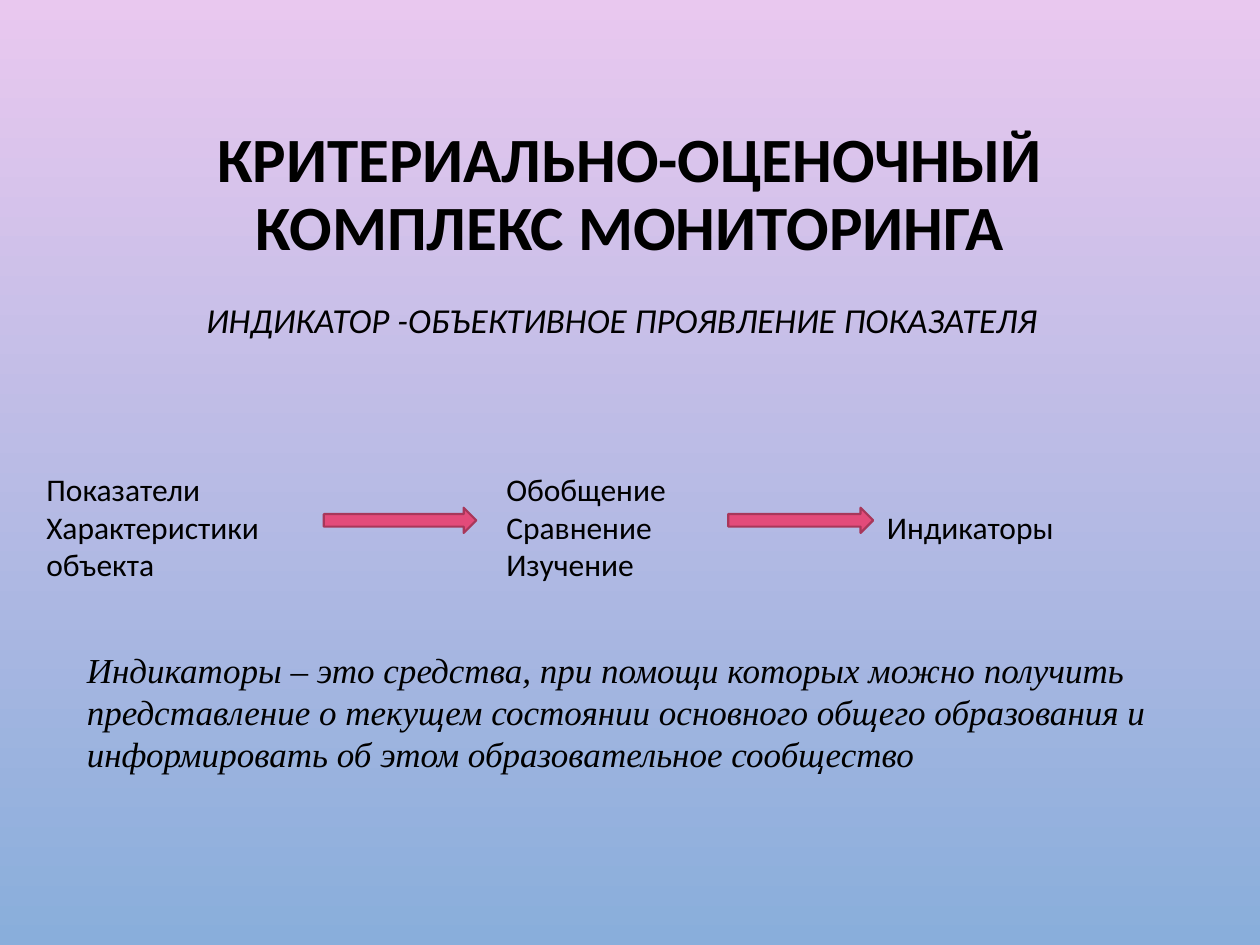
from dataclasses import dataclass

from pptx import Presentation
from pptx import util as u
from pptx.dml.color import RGBColor
from pptx.enum import shapes, text

COLORS = {
    "top": "E9C8EF",
    "bottom": "89AEDB",
    "text": "000000",
    "arrow": "E34B7A",
    "arrow_line": "A8375A",
}
COLUMNS, ROWS = 100, 75
WIDTH, HEIGHT = u.Inches(10), u.Inches(7.5)


@dataclass
class Box:
    col: float
    row: float
    cols: float
    rows: float

    def emu(self) -> tuple[int, int, int, int]:
        dx, dy = WIDTH / COLUMNS, HEIGHT / ROWS
        return (round(self.col * dx), round(self.row * dy),
                round(self.cols * dx), round(self.rows * dy))


@dataclass
class Label:
    box: Box
    lines: list[str]
    size: float = 18
    font: str = "Calibri"
    bold: bool = False
    italic: bool = False
    wrap: bool = False
    align: text.PP_ALIGN = text.PP_ALIGN.LEFT
    spacing: float = 1.0
    before: float = 0


TITLE = Label(Box(7.5, 6.8, 85, 17.5), ["КРИТЕРИАЛЬНО-ОЦЕНОЧНЫЙ КОМПЛЕКС МОНИТОРИНГА"],
              size=36, bold=True, wrap=True, align=text.PP_ALIGN.CENTER, spacing=0.9)
LABELS = [
    Label(Box(1.7, 22.9, 95.3, 4.7), ["ИНДИКАТОР -ОБЪЕКТИВНОЕ ПРОЯВЛЕНИЕ ПОКАЗАТЕЛЯ"],
          size=20, italic=True, wrap=True, align=text.PP_ALIGN.CENTER, spacing=1.1, before=10),
    Label(Box(2.7, 36.8, 23, 10.1), ["Показатели", "Характеристики", "объекта"]),
    Label(Box(39.2, 36.8, 16.7, 10.1), ["Обобщение", "Сравнение", "Изучение"]),
    Label(Box(69.4, 39.8, 18.5, 4), ["Индикаторы"]),
    Label(Box(5.9, 51, 89.9, 11.1),
          ["Индикаторы – это средства, при помощи которых можно получить представление "
           "о текущем состоянии основного общего образования и информировать об этом "
           "образовательное сообщество"],
          size=20, font="Times New Roman", italic=True, wrap=True),
]
ARROWS = [Box(25.7, 40.3, 12.1, 2), Box(57.8, 40.3, 11.5, 2)]


def color(name: str) -> RGBColor:
    return RGBColor.from_string(COLORS[name])


def paint_background(s) -> None:
    fill = s.background.fill
    fill.gradient()
    fill.gradient_angle = 270
    for stop, position, name in zip(fill.gradient_stops, (0, 1), ("top", "bottom")):
        stop.position = position
        stop.color.rgb = color(name)


def write(sp, label: Label) -> None:
    sp.left, sp.top, sp.width, sp.height = label.box.emu()
    tf = sp.text_frame
    tf.text = "\n".join(label.lines)
    tf.auto_size = text.MSO_AUTO_SIZE.NONE
    tf.word_wrap = label.wrap
    for p in tf.paragraphs:
        p.alignment = label.align
        p.line_spacing = label.spacing
        p.space_before = u.Pt(label.before)
        p.font.name = label.font
        p.font.size = u.Pt(label.size)
        p.font.bold = label.bold
        p.font.italic = label.italic
        p.font.color.rgb = color("text")


def add_arrow(s, box: Box) -> None:
    sp = s.shapes.add_shape(shapes.MSO_SHAPE.RIGHT_ARROW, *box.emu())
    sp.shadow.inherit = False
    sp.fill.solid()
    sp.fill.fore_color.rgb = color("arrow")
    sp.line.color.rgb = color("arrow_line")
    sp.line.width = u.Pt(1.25)


def main() -> None:
    prs = Presentation()
    prs.slide_width, prs.slide_height = WIDTH, HEIGHT
    s = prs.slides.add_slide(prs.slide_layouts.get_by_name("Title Only"))
    paint_background(s)
    write(s.shapes.title, TITLE)
    s.shapes.title.text_frame.vertical_anchor = text.MSO_ANCHOR.MIDDLE
    for label in LABELS:
        write(s.shapes.add_textbox(*label.box.emu()), label)
    for box in ARROWS:
        add_arrow(s, box)
    prs.save("out.pptx")


if __name__ == "__main__":
    main()
